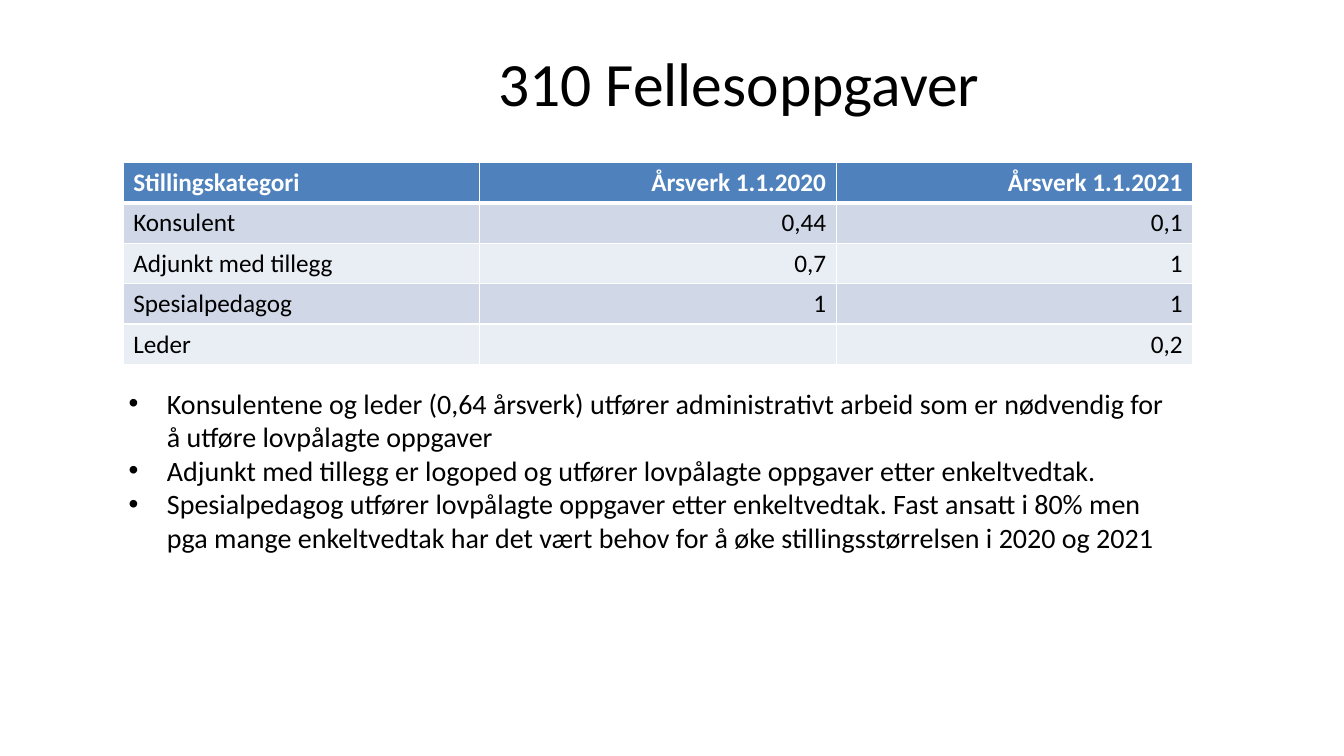
import dataclasses

import pptx
import pptx.dml.color
import pptx.enum.text
import pptx.oxml.ns
import pptx.util
from lxml import etree

ALIGN = pptx.enum.text.PP_ALIGN
ANCHOR = pptx.enum.text.MSO_ANCHOR
COLUMNS = 12
ROWS = 12
COLUMN = pptx.util.Inches(13.33) / COLUMNS
ROW = pptx.util.Inches(7.5) / ROWS


@dataclasses.dataclass(frozen=True)
class Theme:
    font: str = "Calibri"
    title_size: int = 44
    table_size: int = 18
    bullet_size: int = 20
    text: str = "000000"
    white: str = "FFFFFF"
    header: str = "4F81BD"
    bands: tuple = ("D0D8E8", "E9EDF4")


THEME = Theme()

STAFFING = [
    ("Stillingskategori", "Årsverk 1.1.2020", "Årsverk 1.1.2021"),
    ("Konsulent", "0,44", "0,1"),
    ("Adjunkt med tillegg", "0,7", "1"),
    ("Spesialpedagog", "1", "1"),
    ("Leder", "", "0,2"),
]

REMARKS = [
    "Konsulentene og leder (0,64 årsverk) utfører administrativt arbeid som er "
    "nødvendig for å utføre lovpålagte oppgaver",
    "Adjunkt med tillegg er logoped og utfører lovpålagte oppgaver etter enkeltvedtak.",
    "Spesialpedagog utfører lovpålagte oppgaver etter enkeltvedtak. Fast ansatt i 80% "
    "men pga mange enkeltvedtak har det vært behov for å øke stillingsstørrelsen "
    "i 2020 og 2021",
]


def place(left, top, width, height):
    return [round(length) for length in
            (left * COLUMN, top * ROW, width * COLUMN, height * ROW)]


def set_attributes(target, values):
    for name, value in values.items():
        setattr(target, name, value)


def write(paragraph, text, size, color=THEME.text, bold=False, alignment=ALIGN.LEFT):
    paragraph.alignment = alignment
    if not text:
        return
    run = paragraph.add_run()
    run.text = text
    set_attributes(run.font, {
        "name": THEME.font, "size": pptx.util.Pt(size), "bold": bold})
    run.font.color.rgb = pptx.dml.color.RGBColor.from_string(color)


def add_text_frame(slide, area, anchor):
    frame = slide.shapes.add_textbox(*place(*area)).text_frame
    set_attributes(frame, {"word_wrap": True, "vertical_anchor": anchor})
    return frame


def add_title(slide, text, area):
    frame = add_text_frame(slide, area, ANCHOR.MIDDLE)
    write(frame.paragraphs[0], text, THEME.title_size, alignment=ALIGN.CENTER)


def add_bullets(slide, texts, area):
    frame = add_text_frame(slide, area, ANCHOR.TOP)
    indent = pptx.util.Inches(0.38)
    for index, text in enumerate(texts):
        paragraph = frame.add_paragraph() if index else frame.paragraphs[0]
        write(paragraph, text, THEME.bullet_size)
        properties = paragraph._p.get_or_add_pPr()
        properties.set("marL", str(indent))
        properties.set("indent", str(-indent))
        for tag, name, value in (("a:buFont", "typeface", "Arial"),
                                 ("a:buChar", "char", "•")):
            etree.SubElement(properties, pptx.oxml.ns.qn(tag)).set(name, value)


def set_borders(cell, widths):
    properties = cell._tc.get_or_add_tcPr()
    for index, (side, width) in enumerate(widths.items()):
        line = etree.Element(pptx.oxml.ns.qn(f"a:ln{side}"))
        line.set("w", str(pptx.util.Pt(width)))
        fill = etree.SubElement(line, pptx.oxml.ns.qn("a:solidFill"))
        etree.SubElement(fill, pptx.oxml.ns.qn("a:srgbClr")).set("val", THEME.white)
        properties.insert(index, line)


def add_table(slide, records, area):
    frame = slide.shapes.add_table(len(records), len(records[0]), *place(*area))
    for row, record in enumerate(records):
        header = row == 0
        color = THEME.header if header else THEME.bands[(row - 1) % 2]
        for column, text in enumerate(record):
            cell = frame.table.cell(row, column)
            cell.fill.solid()
            cell.fill.fore_color.rgb = pptx.dml.color.RGBColor.from_string(color)
            write(cell.text_frame.paragraphs[0], text, THEME.table_size,
                  THEME.white if header else THEME.text, header,
                  ALIGN.RIGHT if column else ALIGN.LEFT)
            set_borders(cell, {"L": 1, "R": 1, "T": 3 if row == 1 else 1,
                               "B": 3 if header else 1})


def main():
    presentation = pptx.Presentation()
    set_attributes(presentation, {
        "slide_width": round(COLUMN * COLUMNS), "slide_height": round(ROW * ROWS)})
    slide = presentation.slides.add_slide(presentation.slide_layouts[6])
    add_title(slide, "310 Fellesoppgaver", (1.2, 0.3, 10.8, 2))
    add_table(slide, STAFFING, (1.1, 2.58, 9.55, 3.2))
    add_bullets(slide, REMARKS, (1.06, 6.05, 9.59, 2.85))
    presentation.save("out.pptx")


if __name__ == "__main__":
    main()
